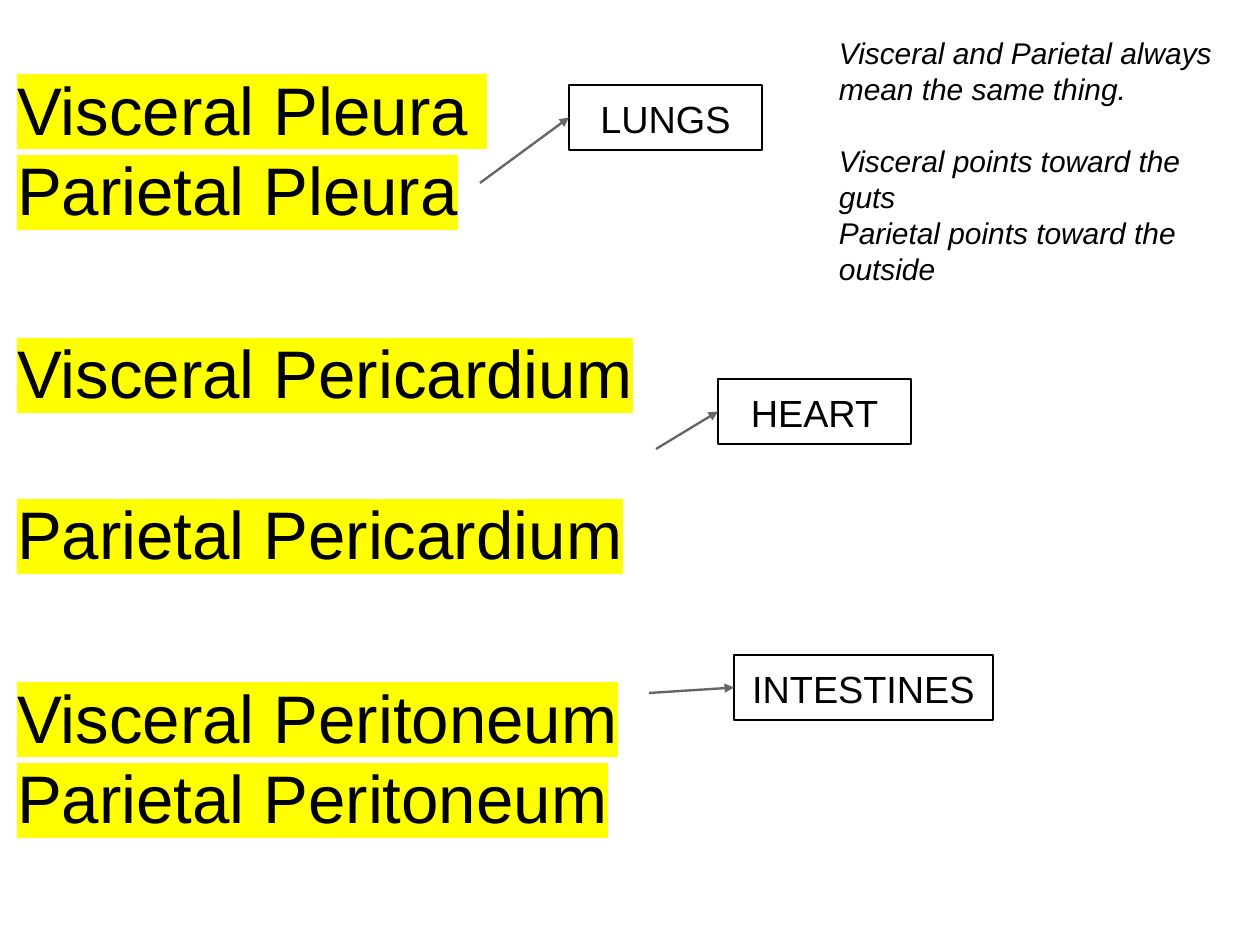
from lxml.etree import SubElement as Sub
from pptx import Presentation
from pptx.dml.color import RGBColor as Rgb
from pptx.enum.shapes import MSO_CONNECTOR as Conn, MSO_SHAPE as Shape
from pptx.enum.text import MSO_ANCHOR as Anchor, PP_ALIGN as Align
from pptx.oxml.ns import qn
from pptx.util import Pt

SCALE = 8063
FONT = "Arial"
HEX = {"ink": "000000", "mark": "FFFF00", "arrow": "666666"}

TERMS = [
    ("Visceral Pleura ", 0),
    ("Parietal Pleura", 0),
    ("Visceral Pericardium", 65),
    ("Parietal Pericardium", 51),
    ("Visceral Peritoneum", 65),
    ("Parietal Peritoneum", 0),
]
NOTES = [
    ("Visceral and Parietal always mean the same thing.", 0),
    ("Visceral points toward the guts", 23),
    ("Parietal points toward the outside", 0),
]
ORGANS = [
    ("LUNGS", (569, 85, 193, 65), (480, 183)),
    ("HEART", (718, 379, 193, 65), (656, 449)),
    ("INTESTINES", (734, 655, 259, 65), (649, 693)),
]


def px(*nums):
    return [n * SCALE for n in nums]


def tint(name):
    return Rgb.from_string(HEX[name])


def fill_text(shape, lines, size, inset, align=Align.LEFT, slant=False, mark=False):
    frame = shape.text_frame
    frame.word_wrap = True
    frame.vertical_anchor = Anchor.TOP
    pad = inset * SCALE
    frame.margin_left = frame.margin_right = pad
    frame.margin_top = frame.margin_bottom = pad
    for i, (text, gap) in enumerate(lines):
        para = frame.add_paragraph() if i else frame.paragraphs[0]
        para.alignment = align
        para.space_before = Pt(gap)
        run = para.add_run()
        run.text = text
        font = run.font
        font.name, font.size, font.italic = FONT, Pt(size), slant
        font.color.rgb = tint("ink")
        if mark:
            props = run._r.get_or_add_rPr()
            light = Sub(props, qn("a:highlight"))
            Sub(light, qn("a:srgbClr"), val=HEX["mark"])
            props.find(qn("a:solidFill")).addnext(light)


def add_terms(slide, box):
    text = slide.shapes.add_textbox(*px(*box))
    fill_text(text, TERMS, 42.7, 5, mark=True)


def add_notes(slide, box):
    text = slide.shapes.add_textbox(*px(*box))
    fill_text(text, NOTES, 19, 11, slant=True)


def add_organ(slide, name, box, start):
    rect = slide.shapes.add_shape(Shape.RECTANGLE, *px(*box))
    rect.shadow.inherit = False
    rect.fill.background()
    rect.line.color.rgb = tint("ink")
    rect.line.width = Pt(1.5)
    fill_text(rect, [(name, 0)], 24, 11, Align.CENTER)

    left, top, _, high = box
    end = left, top + high // 2
    arrow = slide.shapes.add_connector(Conn.STRAIGHT, *px(*start, *end))
    arrow.end_connect(rect, 1)
    arrow.line.color.rgb = tint("arrow")
    arrow.line.width = Pt(1.5)
    props = arrow._element.spPr
    Sub(props.find(qn("a:ln")), qn("a:tailEnd"), type="triangle")
    Sub(props, qn("a:effectLst"))


def main():
    deck = Presentation()
    deck.slide_width, deck.slide_height = px(1260, 945)
    slide = deck.slides.add_slide(deck.slide_layouts[6])
    add_terms(slide, (12, 63, 643, 773))
    add_notes(slide, (828, 24, 418, 298))
    for organ in ORGANS:
        add_organ(slide, *organ)
    deck.save("out.pptx")


if __name__ == "__main__":
    main()
